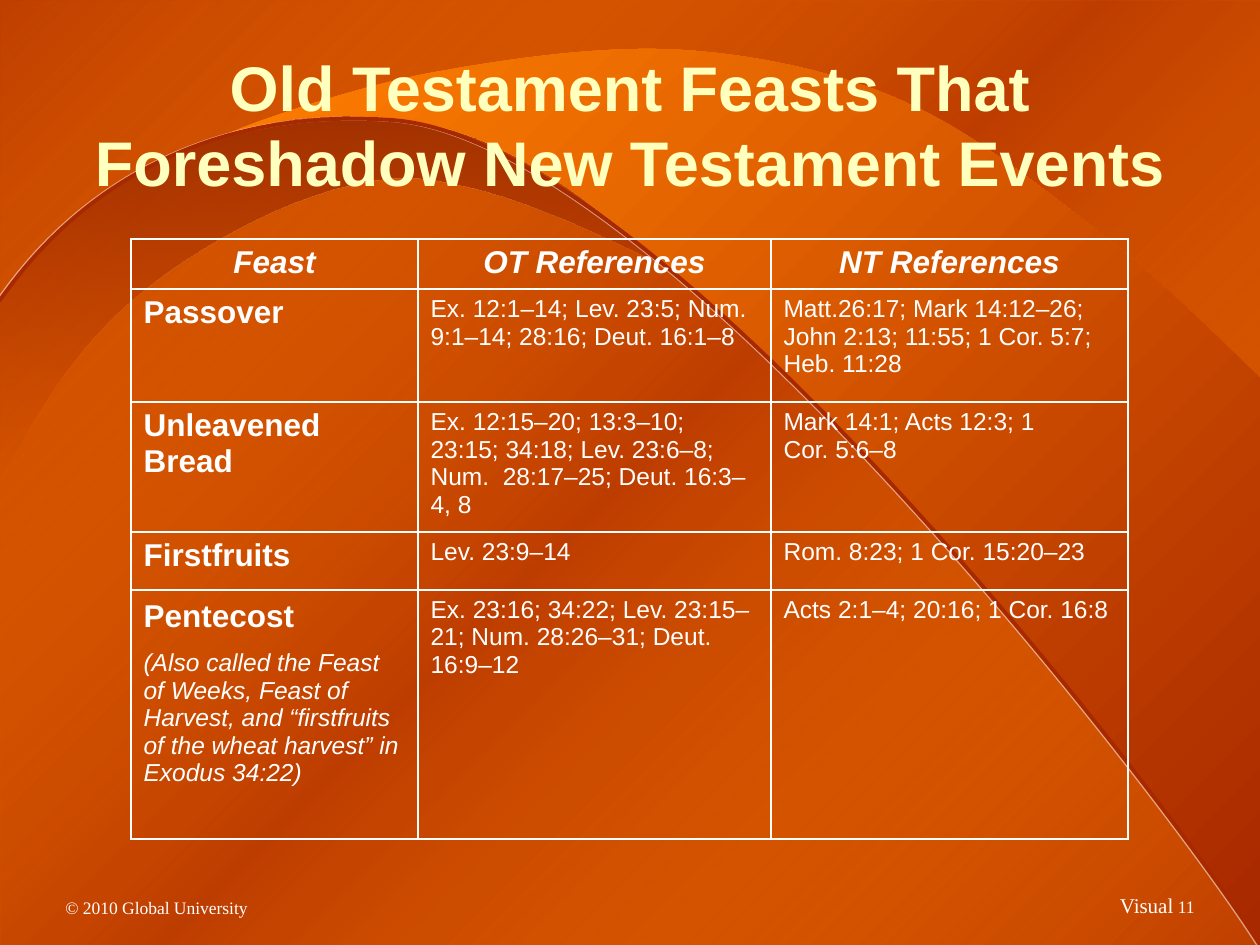
from dataclasses import dataclass

from lxml.etree import SubElement
from pptx import Presentation
from pptx.dml.color import RGBColor
from pptx.enum.shapes import MSO_SHAPE
from pptx.enum.text import MSO_ANCHOR, MSO_AUTO_SIZE, PP_ALIGN
from pptx.oxml import parse_xml
from pptx.oxml.ns import nsdecls, qn
from pptx.util import Pt


@dataclass(frozen=True)
class Theme:
    rust: str = "A82800"
    orange: str = "FF7F00"
    shade: str = "8A2100"
    white: str = "FFFFFF"
    cream: str = "FFFFBE"
    sans: str = "Arial"
    serif: str = "Times New Roman"
    title: int = 36
    spacer: int = 20
    heading: int = 18
    body: int = 14
    visual: int = 12
    small: int = 10


THEME = Theme()
PX = 914400 / 126
HARD_SPACE = chr(160)


def write_text(paragraph, text, size=THEME.body, font=THEME.sans, color=THEME.white,
               bold=False, italic=False, align=PP_ALIGN.LEFT, before=0):
    paragraph.alignment = align
    if before:
        paragraph.space_before = Pt(before)
    run = paragraph.add_run()
    run.text = text
    run.font.size, run.font.name = Pt(size), font
    run.font.bold, run.font.italic = bold, italic
    run.font.color.rgb = RGBColor.from_string(color)


def paint_gradient(fill, owner, stops, angle):
    """Give owner's fill a linear gradient; each stop is (position %, colour, opacity %)."""
    fill.gradient()
    gradient = next(owner.iter(qn("a:gradFill")))
    stop_list = gradient.find(qn("a:gsLst"))
    stop_list.clear()
    for position, color, opacity in stops:
        stop = SubElement(stop_list, qn("a:gs"), pos=str(position * 1000))
        tint = SubElement(stop, qn("a:srgbClr"), val=color)
        if opacity < 100:
            SubElement(tint, qn("a:alpha"), val=str(opacity * 1000))
    gradient.find(qn("a:lin")).set("ang", str(angle * 60000))


deck = Presentation()
deck.slide_width, deck.slide_height = round(1260 * PX), round(945 * PX)
slide = deck.slides.add_slide(deck.slide_layouts[5])

# Backdrop
paint_gradient(slide.background.fill, slide.element,
               [(0, THEME.rust, 100), (50, THEME.orange, 100), (100, THEME.rust, 100)], 45)
veil = slide.shapes.add_shape(MSO_SHAPE.RECTANGLE, 0, 0, deck.slide_width, deck.slide_height)
veil.shadow.inherit = False
veil.line.fill.background()
paint_gradient(veil.fill, veil.element,
               [(0, THEME.orange, 27), (50, THEME.rust, 75), (100, THEME.orange, 27)], 45)

# Each wave: start and cubic segments (two controls, then the end), gradient stops, angle
bright_wave = [
    (1260, 378), (1260, 378), (1260, 877), (1260, 945), (1211, 863), (1037, 648), (951, 549),
    (864, 450), (856, 444), (808, 396), (760, 348), (728, 316), (662, 262),
    (595, 208), (475, 126), (399, 120), (324, 112), (237, 135), (223, 137),
    (228, 130), (353, 87), (430, 73), (507, 59), (602, 45), (682, 50),
    (761, 55), (845, 74), (907, 103), (979, 135), (1055, 198), (1113, 243),
    (1172, 290), (1230, 350), (1260, 378)]
dark_wave = [
    (668, 268), (626, 248), (480, 170), (387, 179), (294, 188), (174, 257), (112, 319),
    (49, 381), (24, 444), (0, 476), (0, 387), (0, 299), (0, 299),
    (32, 247), (110, 178), (183, 149), (256, 121), (339, 105), (438, 127),
    (539, 150), (644, 248), (668, 268)]
crest = [(-1, 301), (9, 292), (118, 101), (391, 120), (663, 137), (1177, 813), (1260, 945)]
waves = [
    (bright_wave, [(0, THEME.orange, 100), (100, THEME.rust, 100)], 45),
    (dark_wave, [(0, THEME.shade, 67), (100, THEME.rust, 0)], 90),
    (crest, None, 0),
]
for points, stops, angle in waves:
    start, *rest = [(round(x * PX), round(y * PX)) for x, y in points]
    builder = slide.shapes.build_freeform(*start)
    builder.add_line_segments(rest, close=stops is not None)
    wave = builder.convert_to_shape()
    # Join every three straight steps into one Bezier curve
    steps = list(wave.element.iter(qn("a:lnTo")))
    for first in range(0, len(steps), 3):
        curve = parse_xml(f'<a:cubicBezTo {nsdecls("a")}/>')
        steps[first].addprevious(curve)
        for step in steps[first:first + 3]:
            curve.append(step[0])
            step.getparent().remove(step)
    wave.shadow.inherit = False
    if stops:
        wave.line.fill.background()
        paint_gradient(wave.fill, wave.element, stops, angle)
    else:
        wave.fill.background()
        wave.line.color.rgb = RGBColor.from_string(THEME.rust)
        wave.line.width = Pt(2.25)
        effects = next(wave.element.iter(qn("a:effectLst")))
        glint = SubElement(effects, qn("a:outerShdw"), blurRad="0", dist="12700",
                           dir="10800000", algn="ctr", rotWithShape="0")
        tint = SubElement(glint, qn("a:srgbClr"), val=THEME.white)
        SubElement(tint, qn("a:alpha"), val="50000")

# Footer
footers = [
    ((53, 861, 378, 63), PP_ALIGN.LEFT, [("© 2010 Global University", THEME.small)]),
    ((892, 861, 315, 63), PP_ALIGN.RIGHT, [("Visual", THEME.visual), (" 11", THEME.small)]),
]
for box, align, runs in footers:
    footer = slide.shapes.add_textbox(*(round(v * PX) for v in box))
    footer.text_frame.word_wrap = True
    footer.text_frame.vertical_anchor = MSO_ANCHOR.BOTTOM
    for text, size in runs:
        write_text(footer.text_frame.paragraphs[0], text, size=size, font=THEME.serif,
                   align=align)

# Title, lifted above the backdrop
title = slide.shapes.title
footer.element.addnext(title.element)
title.left, title.top, title.width, title.height = (
    round(v * PX) for v in (53, 42, 1154, 157))
title.text_frame.word_wrap = True
title.text_frame.auto_size = MSO_AUTO_SIZE.NONE
title.text_frame.vertical_anchor = MSO_ANCHOR.TOP
write_text(title.text_frame.paragraphs[0],
           "Old Testament Feasts That Foreshadow New Testament Events",
           size=THEME.title, color=THEME.cream, bold=True, align=PP_ALIGN.CENTER)

# Feasts table
feasts = [
    ("Feast", "OT References", "NT References"),
    ("Passover", "Ex. 12:1–14; Lev. 23:5; Num. 9:1–14; 28:16; Deut. 16:1–8",
     "Matt.26:17; Mark 14:12–26; John 2:13; 11:55; 1 Cor. 5:7; Heb. 11:28"),
    ("Unleavened Bread",
     f"Ex. 12:15–20; 13:3–10; 23:15; 34:18; Lev. 23:6–8; Num. {HARD_SPACE}28:17–25; "
     "Deut. 16:3–4, 8",
     f"Mark 14:1; Acts 12:3; 1 Cor.{HARD_SPACE}5:6–8"),
    ("Firstfruits", "Lev. 23:9–14", "Rom. 8:23; 1 Cor. 15:20–23"),
    ("Pentecost", "Ex. 23:16; 34:22; Lev. 23:15–21; Num. 28:26–31; Deut. 16:9–12",
     "Acts 2:1–4; 20:16; 1 Cor. 16:8"),
]
column_widths = [287, 353, 357]
row_heights = [50, 113, 130, 58, 249]
table = slide.shapes.add_table(
    len(feasts), len(column_widths),
    *(round(v * PX) for v in (131, 239, sum(column_widths), sum(row_heights)))).table
table.first_row = table.horz_banding = False
for column, width in zip(table.columns, column_widths):
    column.width = round(width * PX)
for row, height in zip(table.rows, row_heights):
    row.height = round(height * PX)

for r, feast in enumerate(feasts):
    for c, text in enumerate(feast):
        cell = table.cell(r, c)
        cell_properties = cell._tc.get_or_add_tcPr()
        for side in ("lnL", "lnR", "lnT", "lnB"):
            cell_properties.append(parse_xml(
                f'<a:{side} {nsdecls("a")} w="12700"><a:solidFill>'
                f'<a:srgbClr val="{THEME.white}"/></a:solidFill></a:{side}>'))
        cell.fill.background()
        is_heading = r == 0 or c == 0
        write_text(cell.text_frame.paragraphs[0], text,
                   size=THEME.heading if is_heading else THEME.body,
                   bold=is_heading, italic=r == 0,
                   align=PP_ALIGN.CENTER if r == 0 else PP_ALIGN.LEFT)

pentecost = table.cell(4, 0).text_frame
write_text(pentecost.paragraphs[0], " ", size=THEME.spacer, bold=True)
write_text(pentecost.add_paragraph(),
           "(Also called the Feast of Weeks, Feast of Harvest, and “firstfruits of the wheat "
           "harvest” in Exodus 34:22)", italic=True, before=8)

deck.save("out.pptx")
